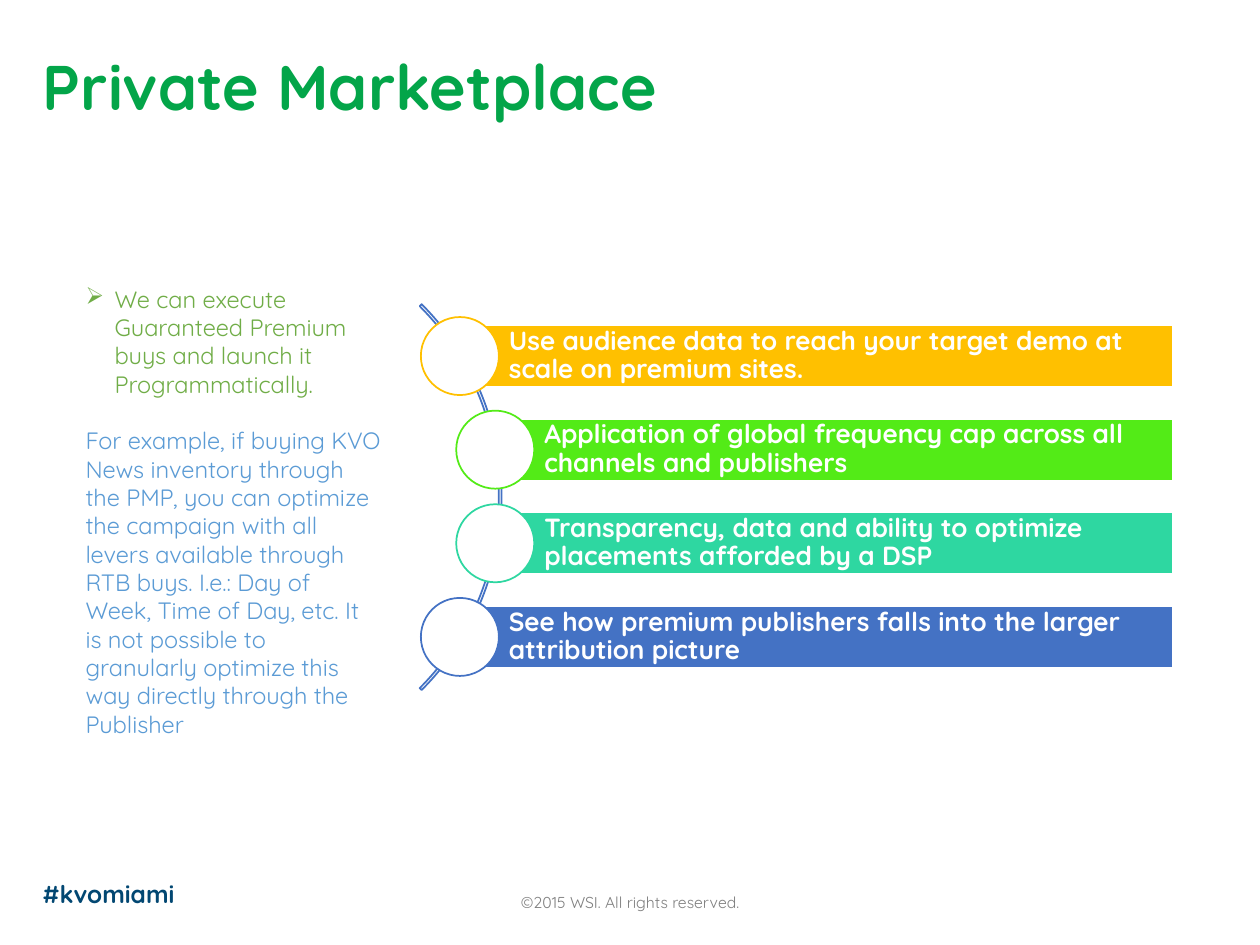
import pptx
import pptx.util
import pptx.dml.color
import pptx.enum.shapes
import pptx.enum.text
from dataclasses import dataclass
from lxml import etree

Pt = pptx.util.Pt
SHAPE = pptx.enum.shapes.MSO_SHAPE
ALIGN = pptx.enum.text.PP_ALIGN
MIDDLE = pptx.enum.text.MSO_ANCHOR.MIDDLE


@dataclass(frozen=True)
class Theme:
    font: str = "Quicksand"
    title_size: float = 36
    bar_size: float = 15
    tag_size: float = 14
    body_size: float = 13.5
    footer_size: float = 9
    title: str = "03A549"
    tag: str = "024772"
    footer: str = "7F7F7F"
    point: str = "70AD47"
    example: str = "5B9BD5"
    arc: str = "4472C4"
    white: str = "FFFFFF"


T = Theme()

BARS = [  # text, colour, left edge
    ("Use audience data to reach your target demo at scale on premium sites.", "FFC000", 262.8),
    ("Application of global frequency cap across all channels and publishers", "53EB17", 283),
    ("Transparency, data and ability to optimize placements afforded by a DSP", "2ED7A1", 283),
    ("See how premium publishers falls into the larger attribution picture", "4472C4", 262.8),
]
BAR_RIGHT, BAR_TOP, BAR_STEP, BAR_HEIGHT = 670.3, 185.8, 53.5, 35.3
CIRCLE = 44.6


def rgb(value):
    return pptx.dml.color.RGBColor.from_string(value)


def write(p, text, size, color, bold=False, align=ALIGN.LEFT):
    p.text = text
    p.alignment = align
    font = p.runs[0].font
    font.name, font.size, font.bold = T.font, Pt(size), bold
    font.color.rgb = rgb(color)


def add_bullet(p, char, indent):
    pPr = p._p.get_or_add_pPr()
    pPr.set("marL", str(Pt(indent)))
    pPr.set("indent", str(-Pt(indent)))
    etree.SubElement(pPr, pptx.oxml.ns.qn("a:buChar"), char=char)


def add_text_frame(s, left, top, width, height, wrap=True):
    tf = s.shapes.add_textbox(Pt(left), Pt(top), Pt(width), Pt(height)).text_frame
    tf.word_wrap = wrap
    return tf


def add_shape(s, kind, left, top, width, height, line, fill=None):
    sp = s.shapes.add_shape(kind, Pt(left), Pt(top), Pt(width), Pt(height))
    sp.shadow.inherit = False
    sp.line.color.rgb = rgb(line)
    sp.line.width = Pt(1)
    if fill:
        sp.fill.solid()
        sp.fill.fore_color.rgb = rgb(fill)
    else:
        sp.fill.background()
    return sp


def add_title(s, text):
    sp = s.shapes.title
    sp.left, sp.top, sp.width, sp.height = Pt(17.3), Pt(10.8), Pt(620.6), Pt(81.4)
    tf = sp.text_frame
    tf.vertical_anchor = MIDDLE
    write(tf.paragraphs[0], text, T.title_size, T.title, True)
    tf.paragraphs[0].line_spacing = 0.9


def add_body(s):
    tf = add_text_frame(s, 41.8, 159.1, 182.9, 269.3)
    p = tf.paragraphs[0]
    add_bullet(p, "➢", 16.6)
    write(p, "We can execute Guaranteed Premium buys and launch it Programmatically.",
          T.body_size, T.point)
    p = tf.add_paragraph()
    p.space_before = Pt(16.2)
    write(p, "For example, if buying KVO News inventory through the PMP, you can optimize "
             "the campaign with all levers available through RTB buys. I.e.: Day of Week, "
             "Time of Day, etc. It is not possible to granularly optimize this way directly "
             "through the Publisher", T.body_size, T.example)


def add_bar(s, text, color, left, top):
    sp = add_shape(s, SHAPE.RECTANGLE, left, top, BAR_RIGHT - left, BAR_HEIGHT, T.white, color)
    tf = sp.text_frame
    tf.word_wrap = True
    tf.vertical_anchor = MIDDLE
    tf.margin_left = Pt(28)
    tf.margin_top = tf.margin_right = tf.margin_bottom = Pt(2.9)
    write(tf.paragraphs[0], text, T.bar_size, T.white, True)
    tf.paragraphs[0].line_spacing = 0.9
    # The circle is centred on the bar's left edge
    add_shape(s, SHAPE.OVAL, left - CIRCLE / 2, top + (BAR_HEIGHT - CIRCLE) / 2,
              CIRCLE, CIRCLE, color, T.white)


def add_curved_list(s):
    arc = add_shape(s, SHAPE.BLOCK_ARC, -25.2, 128.2, 311.8, 311.8, T.arc)
    for i, value in enumerate((189, 27, 0.005)):
        arc.adjustments[i] = value
    for i, (text, color, left) in enumerate(BARS):
        add_bar(s, text, color, left, BAR_TOP + i * BAR_STEP)


def main():
    prs = pptx.Presentation()
    prs.slide_width, prs.slide_height = Pt(720), Pt(540)
    s = prs.slides.add_slide(prs.slide_layouts[5])

    # Footer and hashtag
    tf = add_text_frame(s, 280.8, 506.9, 158.4, 40.3)
    write(tf.paragraphs[0], "©2015 WSI. All rights reserved.", T.footer_size, T.footer,
          align=ALIGN.CENTER)
    tf = add_text_frame(s, 17.3, 499, 100, 24.5)
    write(tf.paragraphs[0], "#kvomiami", T.tag_size, T.tag, True)

    # Title, explanation and list of benefits
    add_title(s, "Private Marketplace")
    add_body(s)
    add_curved_list(s)
    prs.save("out.pptx")


if __name__ == "__main__":
    main()
